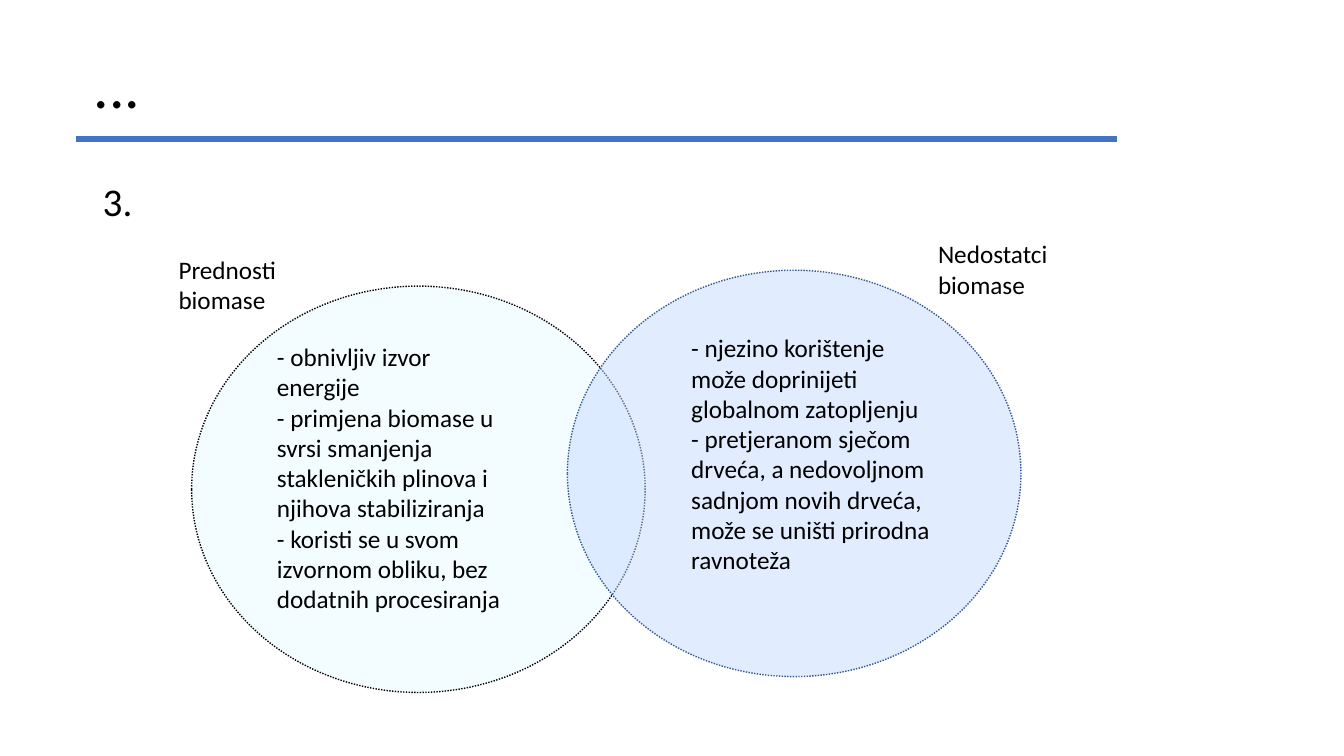
from lxml.etree import SubElement
from pptx import Presentation
from pptx.dml.color import RGBColor as Rgb
from pptx.enum.dml import MSO_LINE as Dash
from pptx.enum.shapes import MSO_CONNECTOR as Link, MSO_SHAPE as Shape
from pptx.enum.text import MSO_ANCHOR as Anchor
from pptx.oxml.ns import qn
from pptx.util import Cm, Pt

COLORS = {
    "text": "000000",
    "rule": "4472C4",
    "mint": "E8FCFF",
    "blue": "C7DBFF",
    "edge": "325491",
}

PROS = [
    "- obnivljiv izvor",
    "energije",
    "- primjena biomase u",
    "svrsi smanjenja",
    "stakleničkih plinova i",
    "njihova stabiliziranja",
    "- koristi se u svom",
    "izvornom obliku, bez",
    "dodatnih procesiranja",
]
CONS = [
    "- njezino korištenje",
    "može doprinijeti",
    "globalnom zatopljenju",
    "- pretjeranom sječom",
    "drveća, a nedovoljnom",
    "sadnjom novih drveća,",
    "može se uništi prirodna",
    "ravnoteža",
]


def color(name):
    return Rgb.from_string(COLORS[name])


def add_text(slide, box, lines, size=18, anchor=Anchor.TOP, spacing=None):
    frame = slide.shapes.add_textbox(*map(Cm, box)).text_frame
    frame.word_wrap = True
    frame.vertical_anchor = anchor
    frame.text = "\n".join(lines)
    for para in frame.paragraphs:
        para.line_spacing = spacing
        para.font.name = "Calibri"
        para.font.size = Pt(size)
        para.font.color.rgb = color("text")


def add_header(slide, box):
    left, top, width, height = box
    add_text(slide, box, ["..."], 44, Anchor.MIDDLE, 0.9)
    # Rule under the title
    start, level = left - 0.2, top + 3.12
    rule = slide.shapes.add_connector(
        Link.STRAIGHT, Cm(start), Cm(level), Cm(start + 26.24), Cm(level))
    rule.line.color.rgb = color("rule")
    rule.line.width = Pt(4.5)
    SubElement(rule._element.spPr, qn("a:effectLst"))


def add_set(slide, box, fill, edge, label, tag, lines, inset):
    left, top, width, height = box
    # Half-transparent circle
    oval = slide.shapes.add_shape(Shape.FLOWCHART_CONNECTOR, *map(Cm, box))
    oval.shadow.inherit = False
    oval.fill.solid()
    oval.fill.fore_color.rgb = color(fill)
    tint = oval.fill._xPr.find(qn("a:solidFill"))[0]
    SubElement(tint, qn("a:alpha"), val="50000")
    oval.line.color.rgb = color(edge)
    oval.line.width = Pt(1)
    oval.line.dash_style = Dash.ROUND_DOT
    # Label outside, list inside
    shift, wide = tag
    add_text(slide, (left + shift, top - 0.92, wide, 1.8), [label])
    across, down = inset
    add_text(slide, (left + across, top + down, 7.62, 0.8 * len(lines)), lines)


def main():
    deck = Presentation()
    deck.slide_width, deck.slide_height = Cm(33.87), Cm(19.05)
    slide = deck.slides.add_slide(deck.slide_layouts[6])

    add_header(slide, (2.11, 0.38, 29.21, 3.68))
    add_text(slide, (2.34, 4.47, 29.21, 12.7), ["3."], 28, spacing=0.9)

    # Venn diagram
    size = (11.43, 10.24)
    add_set(slide, (4.83, 7.21, *size), "mint", "text",
            "Prednosti biomase", (-0.58, 3.25), PROS, (1.9, 1.27))
    add_set(slide, (14.3, 6.81, *size), "blue", "edge",
            "Nedostatci biomase", (9.09, 3.45), CONS, (2.87, 1.45))

    deck.save("out.pptx")


if __name__ == "__main__":
    main()
